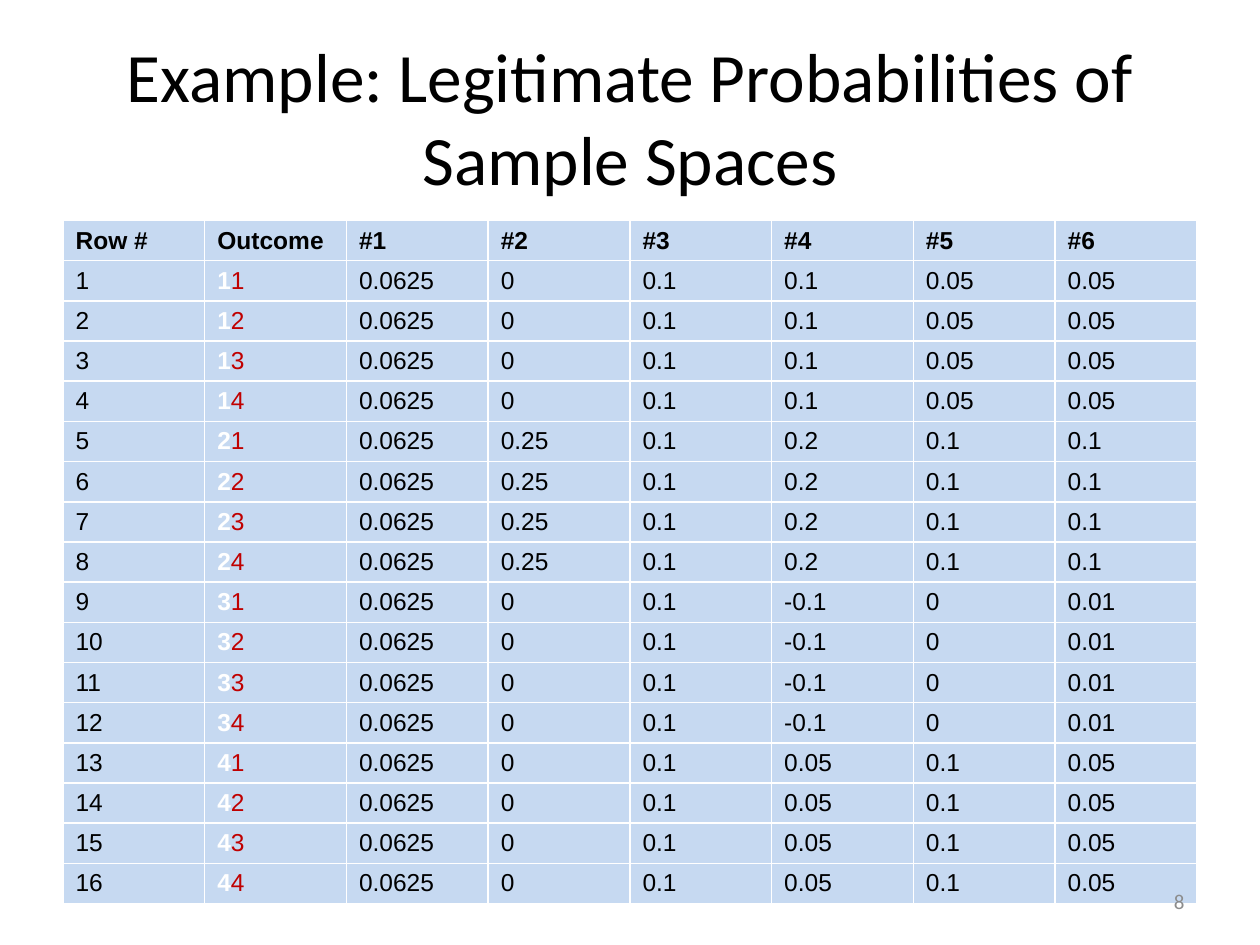
from dataclasses import dataclass
from itertools import product

from lxml import etree
from pptx import Presentation
from pptx.dml.color import RGBColor
from pptx.enum.text import MSO_ANCHOR, MSO_AUTO_SIZE, PP_ALIGN
from pptx.oxml.ns import qn
from pptx.util import Inches, Pt

MIDDLE = MSO_ANCHOR.MIDDLE
CENTER, RIGHT = PP_ALIGN.CENTER, PP_ALIGN.RIGHT
NO_AUTOFIT = MSO_AUTO_SIZE.NONE
TITLE_ONLY = 5


@dataclass(frozen=True)
class Theme:
    heading_font: str = "Calibri"
    table_font: str = "Arial"
    title_size: float = 39.6
    table_size: float = 14
    number_size: float = 12
    border_width: float = 1
    ink: str = "000000"
    first_roll: str = "FFFFFF"
    second_roll: str = "C00000"
    cell: str = "C6D9F1"
    border: str = "FFFFFF"
    number: str = "8C8C8C"


THEME = Theme()

TITLE = "Example: Legitimate Probabilities of Sample Spaces"
HEADERS = ["Row #", "Outcome", "#1", "#2", "#3", "#4", "#5", "#6"]
FACES = "1234"
# Each candidate assignment depends only on the first roll.
PROBABILITIES = {
    "1": ["0.0625", "0", "0.1", "0.1", "0.05", "0.05"],
    "2": ["0.0625", "0.25", "0.1", "0.2", "0.1", "0.1"],
    "3": ["0.0625", "0", "0.1", "-0.1", "0", "0.01"],
    "4": ["0.0625", "0", "0.1", "0.05", "0.1", "0.05"],
}


def style_span(span, font, size, color, bold=False):
    span.font.name = font
    span.font.size = Pt(size)
    span.font.color.rgb = RGBColor.from_string(color)
    span.font.bold = bold


def style_frame(frame, align, size, color):
    """Format a one-paragraph heading or footer."""
    frame.word_wrap = True
    frame.auto_size = NO_AUTOFIT
    frame.vertical_anchor = MIDDLE
    para = frame.paragraphs[0]
    para.alignment = align
    style_span(para.runs[0], THEME.heading_font, size, color)


def add_title(page, left, top, width, height):
    title = page.shapes.title
    title.left, title.top, title.width, title.height = left, top, width, height
    title.text_frame.text = TITLE
    style_frame(title.text_frame, CENTER, THEME.title_size, THEME.ink)


def add_page_number(page, left, top, width, height):
    box = page.shapes.add_textbox(left, top, width, height)
    box.text_frame.text = "8"
    style_frame(box.text_frame, RIGHT, THEME.number_size, THEME.number)


def set_borders(cell):
    properties = cell._tc.get_or_add_tcPr()
    for side in ("a:lnL", "a:lnR", "a:lnT", "a:lnB"):
        line = etree.SubElement(properties, qn(side), w=str(Pt(THEME.border_width)))
        fill = etree.SubElement(line, qn("a:solidFill"))
        etree.SubElement(fill, qn("a:srgbClr"), val=THEME.border)


def fill_cell(cell, spans):
    """Write (text, color, bold) spans into a bordered, tinted cell."""
    set_borders(cell)
    cell.fill.solid()
    cell.fill.fore_color.rgb = RGBColor.from_string(THEME.cell)
    para = cell.text_frame.paragraphs[0]
    for text, color, bold in spans:
        span = para.add_run()
        span.text = text
        style_span(span, THEME.table_font, THEME.table_size, color, bold)


def table_rows():
    """Return the rows of the table, each cell as a list of spans."""
    rows = [[[(header, THEME.ink, True)] for header in HEADERS]]
    for number, (first, second) in enumerate(product(FACES, repeat=2), start=1):
        outcome = [(first, THEME.first_roll, True), (second, THEME.second_roll, False)]
        values = [[(value, THEME.ink, False)] for value in PROBABILITIES[first]]
        rows.append([[(str(number), THEME.ink, False)], outcome, *values])
    return rows


def add_probability_table(page, left, top, width, row_height):
    rows = table_rows()
    table = page.shapes.add_table(
        len(rows), len(HEADERS), left, top, width, row_height * len(rows)
    ).table
    table.horz_banding = False
    for row, row_cells in zip(table.rows, rows):
        row.height = row_height
        for cell, spans in zip(row.cells, row_cells):
            fill_cell(cell, spans)


def main():
    deck = Presentation()
    deck.slide_width, deck.slide_height = Inches(10), Inches(7.5)
    page = deck.slides.add_slide(deck.slide_layouts[TITLE_ONLY])
    add_title(page, Inches(0.5), Inches(0.3), Inches(9), Inches(1.25))
    add_probability_table(page, Inches(0.5), Inches(1.75), Inches(9), Inches(0.29))
    add_page_number(page, Inches(7.17), Inches(6.95), Inches(2.33), Inches(0.4))
    deck.save("out.pptx")


if __name__ == "__main__":
    main()
